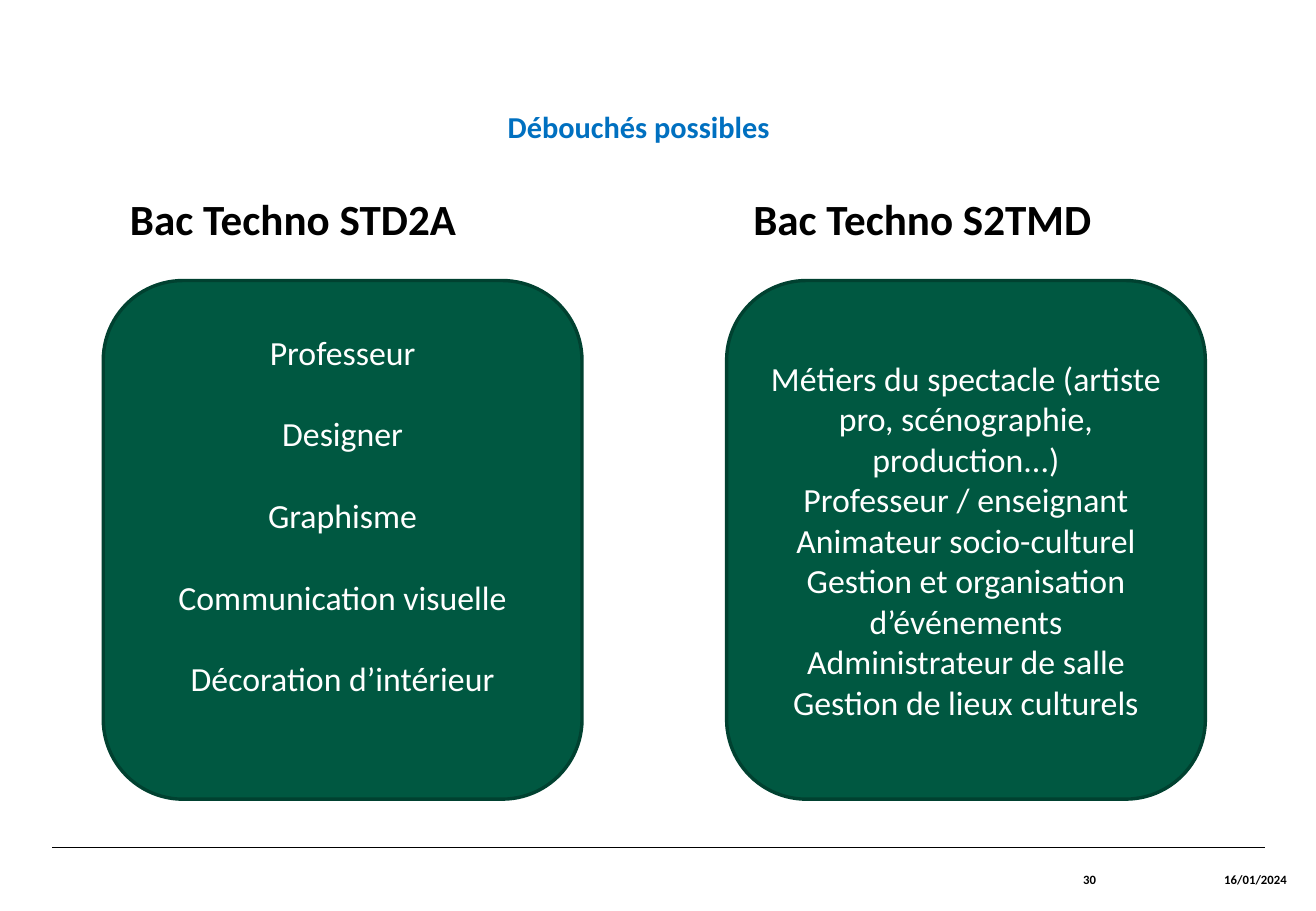
from dataclasses import dataclass

from lxml import etree
from pptx import Presentation
from pptx import util as u
from pptx.dml.color import RGBColor
from pptx.enum import shapes, text
from pptx.oxml.ns import qn

PX = 9144  # EMU per px, 100 px to the inch


@dataclass(frozen=True)
class Theme:
    font: str = "Calibri"
    black: str = "000000"
    white: str = "FFFFFF"
    blue: str = "0070C0"
    green: str = "005841"
    dark_green: str = "004130"
    title_size: float = 18
    heading_size: float = 25.5
    body_size: float = 20
    footer_size: float = 7.5


THEME = Theme()
ALIGN = text.PP_ALIGN
ANCHOR = text.MSO_ANCHOR

STD2A_JOBS = [
    "Professeur",
    "Designer",
    "Graphisme",
    "Communication visuelle",
    "Décoration d’intérieur",
]
S2TMD_JOBS = [
    "Métiers du spectacle (artiste pro, scénographie, production...)",
    "Professeur / enseignant",
    "Animateur socio-culturel",
    "Gestion et organisation d’événements",
    "Administrateur de salle",
    "Gestion de lieux culturels",
]


def px(*lengths):
    return [u.Emu(length * PX) for length in lengths]


def set_insets(frame, left, top, right, bottom):
    (frame.margin_left, frame.margin_top,
     frame.margin_right, frame.margin_bottom) = px(left, top, right, bottom)


def write_lines(frame, lines, size, color, bold=False, align=ALIGN.LEFT, gap=0):
    """Write one paragraph per line, with gap points between them."""
    frame.word_wrap = True
    for index, line in enumerate(lines):
        paragraph = frame.paragraphs[0] if index == 0 else frame.add_paragraph()
        paragraph.alignment = align
        if index and gap:
            paragraph.space_before = u.Pt(gap)
        run = paragraph.add_run()
        run.text = line
        run.font.name = THEME.font
        run.font.size = u.Pt(size)
        run.font.bold = bold
        run.font.color.rgb = RGBColor.from_string(color)


def add_label(slide, box, words, size, color, inset=(0, 0, 0, 0),
              align=ALIGN.LEFT, anchor=ANCHOR.TOP):
    frame = slide.shapes.add_textbox(*px(*box)).text_frame
    set_insets(frame, *inset)
    frame.vertical_anchor = anchor
    write_lines(frame, [words], size, color, bold=True, align=align)
    return frame


def add_title(slide, box):
    add_label(slide, box, "Débouchés possibles", THEME.title_size, THEME.blue,
              inset=(10, 5, 10, 5))


def add_track(slide, box, heading, jobs, gap=0, bottom_inset=5):
    """Place a heading above a rounded card that lists the jobs."""
    left, top, width, height = box
    name = add_label(slide, (left + 22, top, width - 37, 45), heading,
                     THEME.heading_size, THEME.black)
    name.paragraphs[0].line_spacing = 0.9

    heading_height = 68
    card = slide.shapes.add_shape(
        shapes.MSO_SHAPE.ROUNDED_RECTANGLE,
        *px(left, top + heading_height, width, height - heading_height))
    card.shadow.inherit = False
    card.fill.solid()
    card.fill.fore_color.rgb = RGBColor.from_string(THEME.green)
    card.line.color.rgb = RGBColor.from_string(THEME.dark_green)
    card.line.width = u.Pt(2)
    frame = card.text_frame
    set_insets(frame, 10, 5, 10, bottom_inset)
    frame.vertical_anchor = ANCHOR.MIDDLE
    write_lines(frame, jobs, THEME.body_size, THEME.white,
                align=ALIGN.CENTER, gap=gap)


def add_footer(slide, box):
    left, top, width, height = box
    rule = slide.shapes.add_connector(
        shapes.MSO_CONNECTOR.STRAIGHT, *px(left, top, left + width, top))
    rule.line.color.rgb = RGBColor.from_string(THEME.black)
    rule.line.width = u.Pt(0.8)
    etree.SubElement(rule._element.spPr, qn("a:effectLst"))
    for offset, label_width, words in ((699, 160, "30"), (877, 139, "16/01/2024")):
        add_label(slide, (left + offset, top, label_width, height), words,
                  THEME.footer_size, THEME.black,
                  align=ALIGN.RIGHT, anchor=ANCHOR.MIDDLE)


def main():
    deck = Presentation()
    deck.slide_width, deck.slide_height = px(1083, 750)
    slide = deck.slides.add_slide(deck.slide_layouts[6])
    add_title(slide, (408, 84, 280, 40))
    add_track(slide, (85, 163, 394, 495), "Bac Techno STD2A", STD2A_JOBS,
              gap=24.4, bottom_inset=46)
    add_track(slide, (598, 163, 394, 495), "Bac Techno S2TMD", S2TMD_JOBS)
    add_footer(slide, (43, 698, 998, 52))
    deck.save("out.pptx")


if __name__ == "__main__":
    main()
